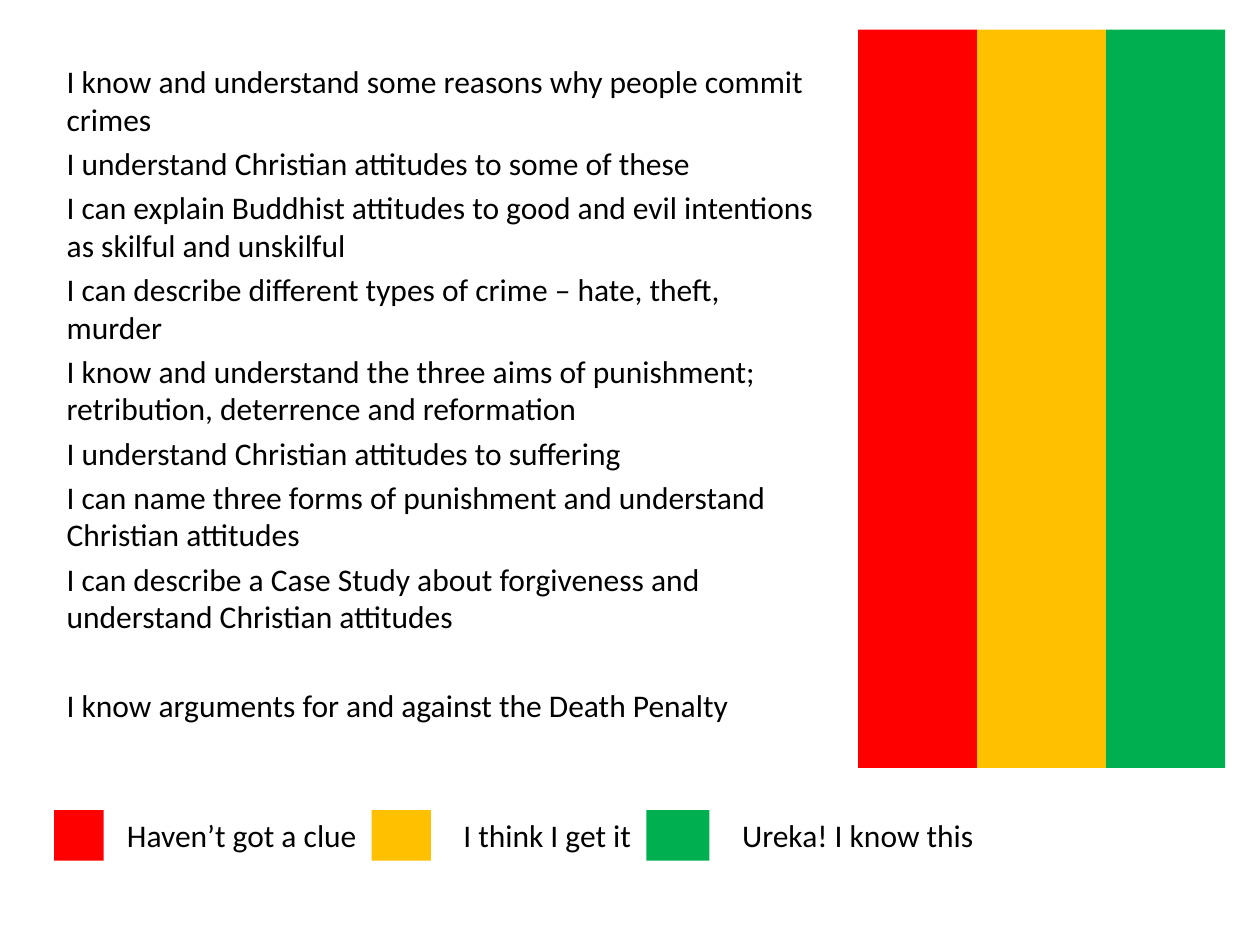
import dataclasses

import lxml.etree
import pptx
import pptx.dml.color
import pptx.enum.shapes
import pptx.enum.text
import pptx.oxml.ns
import pptx.util

Cm = pptx.util.Cm
Pt = pptx.util.Pt


@dataclasses.dataclass(frozen=True)
class Theme:
    font: str = "Calibri"
    size: float = 18
    space_before: float = 3.6
    section_gap: float = 29.2
    border: float = 6
    ink: str = "000000"
    paper: str = "FFFFFF"
    red: str = "FF0000"
    amber: str = "FFC000"
    green: str = "00B050"


THEME = Theme()

STATEMENTS = [
    "I know and understand some reasons why people commit crimes",
    "I understand Christian attitudes to some of these",
    "I can explain Buddhist attitudes to good and evil intentions as skilful and unskilful",
    "I can describe different types of crime – hate, theft, murder",
    "I know and understand the three aims of punishment; retribution, deterrence and reformation",
    "I understand Christian attitudes to suffering",
    "I can name three forms of punishment and understand Christian attitudes",
    "I can describe a Case Study about forgiveness and understand Christian attitudes",
    "I know arguments for and against the Death Penalty",
]

COLUMNS = [(THEME.red, 2.4), (THEME.amber, 2.6), (THEME.green, 2.4)]

RATINGS = [
    (THEME.red, 1.0, 0.22, "Haven’t got a clue", 5.18),
    (THEME.amber, 1.2, 0.4, "I think I get it", 3.94),
    (THEME.green, 1.27, 0.41, "Ureka! I know this", 5.23),
]


def rgb(value):
    return pptx.dml.color.RGBColor.from_string(value)


def write(paragraph, text, *, size=THEME.size, color=THEME.ink, space_before=0):
    paragraph.alignment = pptx.enum.text.PP_ALIGN.LEFT
    paragraph.space_before = Pt(space_before)
    run = paragraph.add_run()
    run.text = text
    run.font.name = THEME.font
    run.font.size = Pt(size)
    run.font.color.rgb = rgb(color)


def remove_bullet(paragraph):
    properties = paragraph._p.get_or_add_pPr()
    properties.set("marL", "0")
    properties.set("indent", "0")
    lxml.etree.SubElement(properties, pptx.oxml.ns.qn("a:buNone"))


def color_block(slide, left, top, width, height, color):
    block = slide.shapes.add_shape(
        pptx.enum.shapes.MSO_SHAPE.RECTANGLE,
        Cm(left), Cm(top), Cm(width), Cm(height),
    )
    block.shadow.inherit = False
    block.fill.solid()
    block.fill.fore_color.rgb = rgb(color)
    block.line.fill.background()


def statement_list(slide, left, top, width, height):
    statements = slide.placeholders[1]
    statements.left, statements.top = Cm(left), Cm(top)
    statements.width, statements.height = Cm(width), Cm(height)
    statements.line.color.rgb = rgb(THEME.paper)
    statements.line.width = Pt(THEME.border)
    frame = statements.text_frame
    frame.word_wrap = True
    frame.auto_size = pptx.enum.text.MSO_AUTO_SIZE.NONE
    frame.vertical_anchor = pptx.enum.text.MSO_ANCHOR.TOP
    for index, statement in enumerate(STATEMENTS):
        paragraph = frame.add_paragraph() if index else frame.paragraphs[0]
        is_last = index == len(STATEMENTS) - 1
        gap = THEME.section_gap if is_last else THEME.space_before
        write(paragraph, statement, space_before=gap)
        remove_bullet(paragraph)


def rating_columns(slide, left, top, height):
    for color, width in COLUMNS:
        color_block(slide, left, top, width, height, color)
        left += width


def rating_key(slide, left, top, height):
    for color, swatch_width, gap, meaning, label_width in RATINGS:
        color_block(slide, left, top, swatch_width, height, color)
        left += swatch_width + gap
        label = slide.shapes.add_textbox(
            Cm(left), Cm(top), Cm(label_width), Cm(height)
        )
        label.text_frame.word_wrap = False
        label.text_frame.auto_size = pptx.enum.text.MSO_AUTO_SIZE.SHAPE_TO_FIT_TEXT
        write(label.text_frame.paragraphs[0], meaning)
        left += label_width


def main():
    presentation = pptx.Presentation()
    presentation.slide_width = Cm(25.4)
    presentation.slide_height = Cm(19.05)
    slide = presentation.slides.add_slide(presentation.slide_layouts[1])
    unused_title = slide.shapes.title.element
    unused_title.getparent().remove(unused_title)
    statement_list(slide, left=1.09, top=1.12, width=15.6, height=14.35)
    rating_columns(slide, left=17.3, top=0.6, height=14.88)
    rating_key(slide, left=1.09, top=16.33, height=1.02)
    presentation.save("out.pptx")


if __name__ == "__main__":
    main()
